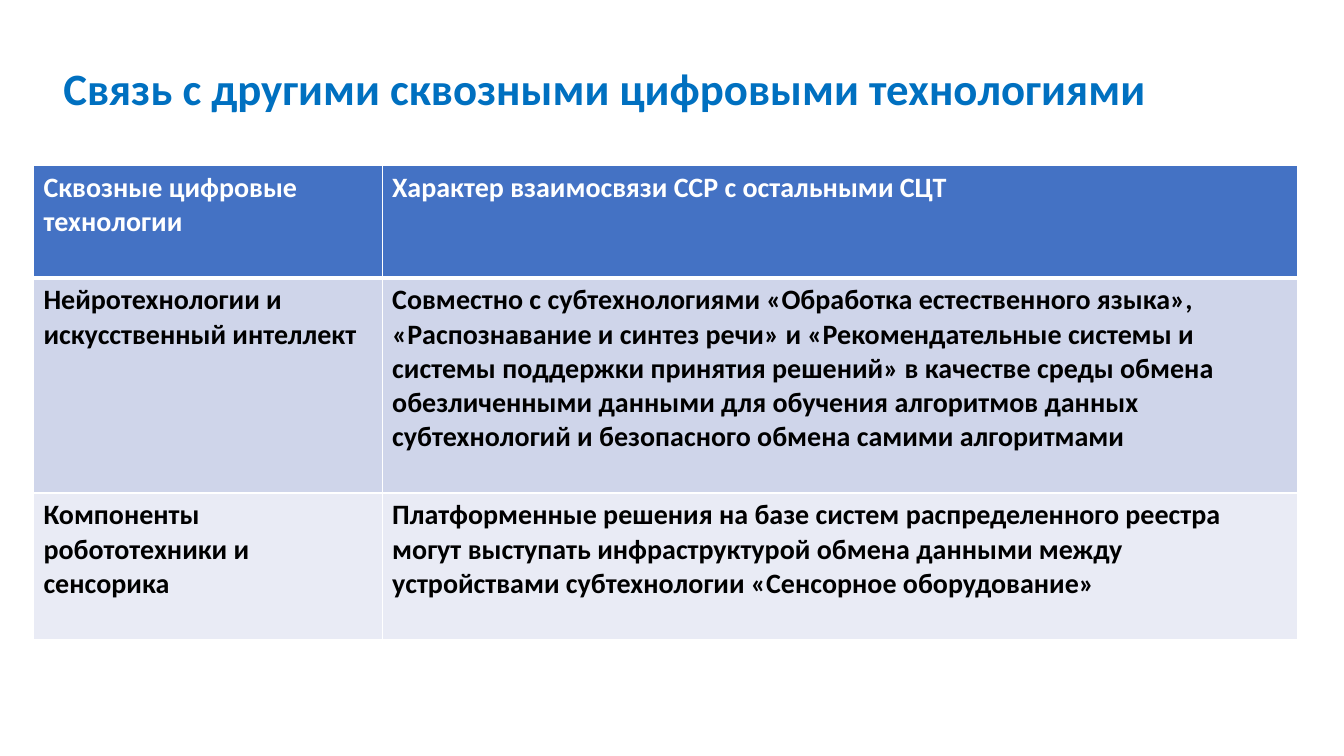
from lxml.etree import SubElement
from pptx import Presentation
from pptx.dml.color import RGBColor
from pptx.enum.text import MSO_ANCHOR
from pptx.oxml.ns import qn
from pptx.util import Pt

COLORS = {
    "title": "0070C0",
    "header": "4472C4",
    "band_dark": "CFD5EA",
    "band_light": "E9EBF5",
    "white": "FFFFFF",
    "black": "000000",
}
TITLE = "Связь с другими сквозными цифровыми технологиями"
# Left cell, right cell, height in text lines, fill, text colour
ROWS = [
    ("Сквозные цифровые технологии",
     "Характер взаимосвязи ССР с остальными СЦТ",
     3, "header", "white"),
    ("Нейротехнологии и искусственный интеллект",
     "Совместно с субтехнологиями «Обработка естественного языка», "
     "«Распознавание и синтез речи» и «Рекомендательные системы и системы "
     "поддержки принятия решений» в качестве среды обмена обезличенными "
     "данными для обучения алгоритмов данных субтехнологий и безопасного "
     "обмена самими алгоритмами",
     6, "band_dark", "black"),
    ("Компоненты робототехники и сенсорика",
     "Платформенные решения на базе систем распределенного реестра могут "
     "выступать инфраструктурой обмена данными между устройствами "
     "субтехнологии «Сенсорное оборудование»",
     4, "band_light", "black"),
]
COLUMN_WIDTHS = (249.1, 653.8)
LINE_HEIGHT, CELL_MARGINS = 24.4, 7.2


def add_text(tf, text, size, color):
    p = tf.paragraphs[0]
    r = p.add_run()
    r.text = text
    font_format = {"name": "Calibri", "size": Pt(size), "bold": True}
    for name, value in font_format.items():
        setattr(r.font, name, value)
    r.font.color.rgb = RGBColor.from_string(COLORS[color])
    return p


def add_title(slide, left, top, width, height):
    sp = slide.shapes.add_textbox(Pt(left), Pt(top), Pt(width), Pt(height))
    tf = sp.text_frame
    tf.word_wrap = True
    tf.vertical_anchor = MSO_ANCHOR.MIDDLE
    add_text(tf, TITLE, 32, "title").line_spacing = 0.9


def set_borders(cell, widths):
    """Draw white left, right, top and bottom borders of the given widths."""
    tcPr = cell._tc.get_or_add_tcPr()
    for side, width in zip(("lnL", "lnR", "lnT", "lnB"), widths):
        ln = SubElement(tcPr, qn(f"a:{side}"), w=str(Pt(width)))
        fill = SubElement(ln, qn("a:solidFill"))
        SubElement(fill, qn("a:srgbClr"), val=COLORS["white"])


def add_technology_table(slide, left, top):
    heights = [lines * LINE_HEIGHT + CELL_MARGINS for _, _, lines, _, _ in ROWS]
    frame = slide.shapes.add_table(
        len(ROWS), len(COLUMN_WIDTHS), Pt(left), Pt(top),
        Pt(sum(COLUMN_WIDTHS)), Pt(sum(heights)))
    table = frame.table
    table.horz_banding = False
    for column, width in zip(table.columns, COLUMN_WIDTHS):
        column.width = Pt(width)
    for i, (*texts, _, fill, color) in enumerate(ROWS):
        table.rows[i].height = Pt(heights[i])
        top_width, bottom_width = 3 if i == 1 else 1, 3 if i == 0 else 1
        for cell, text in zip(table.rows[i].cells, texts):
            set_borders(cell, (1, 1, top_width, bottom_width))
            cell.fill.solid()
            cell.fill.fore_color.rgb = RGBColor.from_string(COLORS[fill])
            add_text(cell.text_frame, text, 20, color)


def main():
    prs = Presentation()
    prs.slide_width, prs.slide_height = Pt(960), Pt(540)
    slide = prs.slides.add_slide(prs.slide_layouts[6])
    add_title(slide, 38.2, 13, 892, 104.4)
    add_technology_table(slide, 23.9, 118.2)
    prs.save("out.pptx")


if __name__ == "__main__":
    main()
